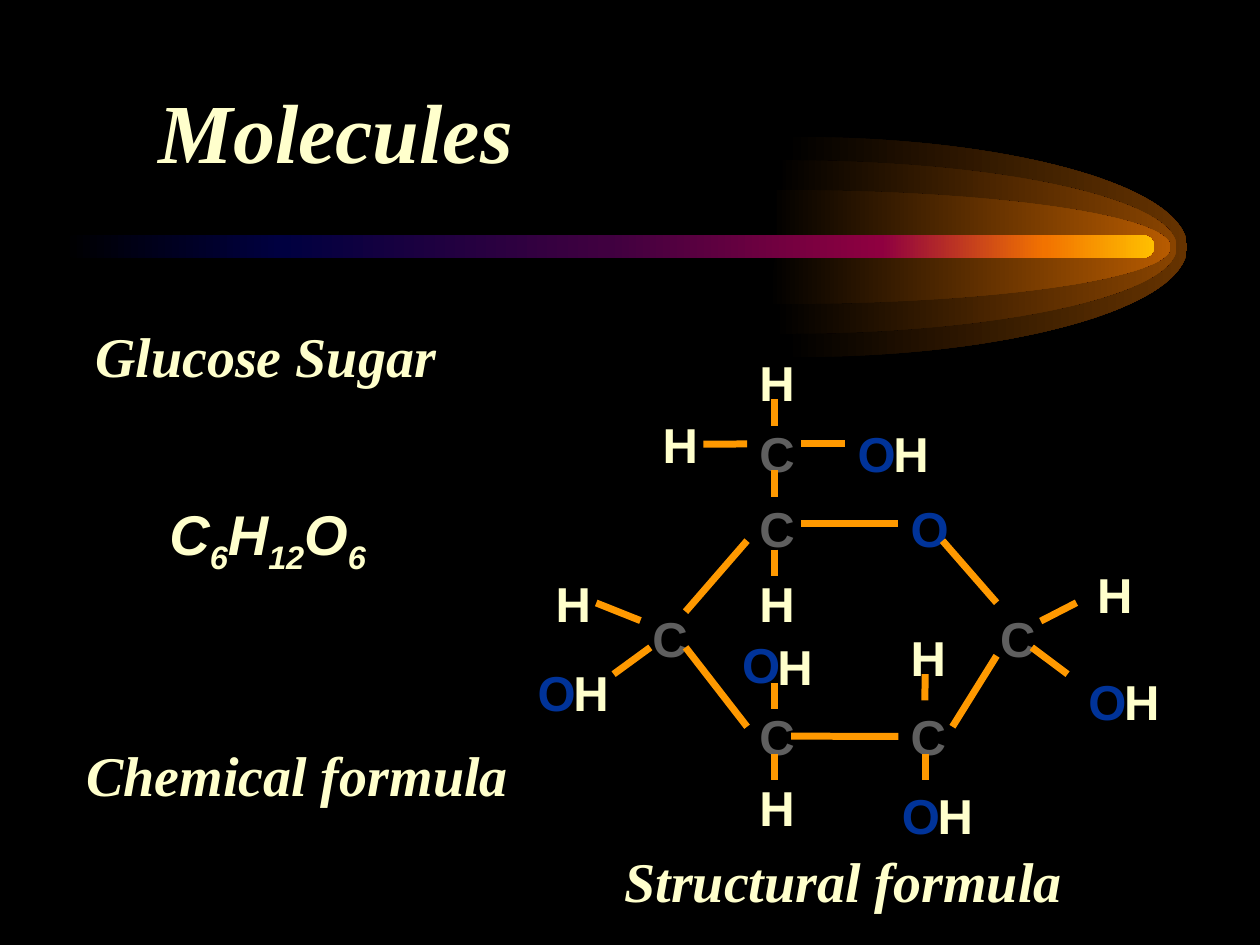
import math
import pptx
import pptx.dml.color
import pptx.enum.shapes
import pptx.enum.text
import pptx.oxml
import pptx.oxml.ns
import pptx.util
from pptx.util import Cm

COLORS = {"night": "000000", "cream": "FFFFCC", "carbon": "5F5F5F",
          "oxygen": "003399", "bond": "FF9900"}
SERIF, SANS = "Times New Roman", "Arial"

deck = pptx.Presentation()
deck.slide_width, deck.slide_height = Cm(25.4), Cm(19.05)
page = deck.slides.add_slide(deck.slide_layouts[6])
page.background.fill.solid()
page.background.fill.fore_color.rgb = pptx.dml.color.RGBColor.from_string(COLORS["night"])


def paint_gradient(shape, stops):
    """Fill left to right with (percent, hex) stops, without outline or shadow."""
    shape.shadow.inherit = False
    shape.line.fill.background()
    shape.fill.gradient()
    shape.fill.gradient_angle = 0
    stop_list = shape._element.spPr.find(".//" + pptx.oxml.ns.qn("a:gsLst"))
    for old_stop in list(stop_list):
        stop_list.remove(old_stop)
    for percent, color in stops:
        stop_list.append(pptx.oxml.parse_xml(
            f'<a:gs {pptx.oxml.ns.nsdecls("a")} pos="{percent * 1000}">'
            f'<a:srgbClr val="{color}"/></a:gs>'))


def add_label(left, top, width, height, runs, size, font, color="cream",
              italic=True, centered=True):
    """Place one line of text; runs are (text, is_subscript) pairs."""
    box = page.shapes.add_textbox(Cm(left), Cm(top), Cm(width), Cm(height))
    frame = box.text_frame
    frame.word_wrap = True
    para = frame.paragraphs[0]
    if centered:
        para.alignment = pptx.enum.text.PP_ALIGN.CENTER
    for text, is_subscript in runs:
        span = para.add_run()
        span.text = text
        span.font.name, span.font.size = font, pptx.util.Pt(size)
        span.font.bold, span.font.italic = True, italic
        span.font.color.rgb = pptx.dml.color.RGBColor.from_string(COLORS[color])
        if is_subscript:
            span._r.get_or_add_rPr().set("baseline", "-25000")
    return box


# Comet: three nested half-ellipse glows around the bar
MIDDLE, REACH, ROUND = 4.98, 7.95, 0.55
for center, radius, glow in [(15.98, 2.22, "663300"), (15.77, 1.75, "894400"),
                             (15.65, 1.15, "B75B00")]:
    # Two quarter curves (two handles and an end each), then the tail corner
    outline = [(ROUND, -1), (1, -ROUND), (1, 0), (1, ROUND), (ROUND, 1), (0, 1),
               (-0.02, 1), (0, 0)]
    builder = page.shapes.build_freeform(Cm(center), Cm(MIDDLE - radius))
    builder.add_line_segments([(Cm(center + REACH * x), Cm(MIDDLE + radius * y))
                               for x, y in outline], close=True)
    flame = builder.convert_to_shape()
    segments = flame._element.spPr.findall(".//" + pptx.oxml.ns.qn("a:lnTo"))
    for first in (0, 3):
        curve = pptx.oxml.parse_xml(f'<a:cubicBezTo {pptx.oxml.ns.nsdecls("a")}/>')
        segments[first].addprevious(curve)
        for segment in segments[first:first + 3]:
            curve.append(segment[0])
            segment.getparent().remove(segment)
    paint_gradient(flame, [(0, COLORS["night"]), (100, glow)])

bar = page.shapes.add_shape(pptx.enum.shapes.MSO_SHAPE.ROUNDED_RECTANGLE,
                            Cm(1.27), Cm(4.74), Cm(22), Cm(0.46))
bar.adjustments[0] = 0.5
paint_gradient(bar, [(0, COLORS["night"]), (20, "000040"), (50, "400040"),
                     (75, "8F0040"), (90, "F27300"), (100, "FFBF00")])

# Headings and formula
for text, left, top, width, height, size in [
        ("Molecules ", 1.69, 1.47, 10.59, 2.29, 48),
        ("Glucose Sugar ", 1.27, 6.35, 8.46, 1.6, 32),
        ("Chemical formula ", 0.84, 14.81, 10.59, 1.6, 32),
        ("Structural formula ", 11.85, 16.94, 10.59, 1.6, 32)]:
    add_label(left, top, width, height, [(text, False)], size, SERIF)
add_label(2.12, 9.95, 6.55, 1.6,
          [(part, part.isdigit()) for part in ("C", "6", "H", "12", "O", "6")], 32, SANS)

# Atoms: each group is spelled out letter by letter
GROUPS = {
    "C": [(15.06, 8.41), (15.06, 9.93), (15.06, 14.12), (18.11, 14.12),
          (12.9, 12.14), (19.91, 12.14)],
    "H": [(15.06, 6.99), (13.11, 8.23), (15.06, 11.43), (10.95, 11.43),
          (15.06, 15.54), (18.11, 12.52), (21.87, 11.25), (15.42, 12.7)],
    "O": [(18.11, 9.93), (14.71, 12.67)],
    "OH": [(17.04, 8.41), (21.69, 13.41), (17.93, 15.72), (10.59, 13.23)],
}
ATOMS = {"C": (1.07, "carbon"), "H": (1.07, "cream"), "O": (1.24, "oxygen")}
atom_boxes = []
for group, places in GROUPS.items():
    for left, top in places:
        for position, letter in enumerate(group):
            width, color = ATOMS[letter]
            atom_boxes.append(add_label(
                left + 0.72 * position, top, width, 1.45, [(letter, False)],
                28, SANS, color, italic=False, centered=False))

# Bonds: short upright ones first, then the rest
upright = [(15.61, 8.05), (15.61, 9.48), (15.61, 11.08), (15.61, 13.77),
           (15.61, 15.19), (18.65, 13.59), (18.65, 15.19)]
bonds = [(x, y, x, y + 0.53) for x, y in upright] + [
    (19, 10.9, 20.09, 12.15), (12.37, 13.59, 13.11, 13.05),
    (15.06, 14.65, 13.82, 13.05), (20.98, 12.52, 21.7, 12.15),
    (12.01, 12.14, 12.91, 12.51), (13.82, 12.33, 15.06, 10.9),
    (20.8, 13.05, 21.52, 13.59), (16.15, 10.55, 18.11, 10.55),
    (19.2, 14.65, 20.09, 13.22), (15.95, 14.84, 18.11, 14.84),
    (14.17, 8.95, 15.06, 8.95), (16.15, 8.95, 17.04, 8.95)]
for x1, y1, x2, y2 in bonds:
    bond = page.shapes.add_connector(pptx.enum.shapes.MSO_CONNECTOR.STRAIGHT,
                                     Cm(x1), Cm(y1), Cm(x2), Cm(y2))
    bond.line.color.rgb = pptx.dml.color.RGBColor.from_string(COLORS["bond"])
    bond.line.width = pptx.util.Pt(4)
    bond._element.spPr.append(pptx.oxml.parse_xml(
        f'<a:effectLst {pptx.oxml.ns.nsdecls("a")}/>'))
    # Join an end that meets the middle of an atom's side
    for box in atom_boxes:
        center_x, center_y = box.left + box.width // 2, box.top + box.height // 2
        sides = [(center_x, box.top), (box.left, center_y),
                 (center_x, box.top + box.height), (box.left + box.width, center_y)]
        for side, point in enumerate(sides):
            if math.dist(point, (Cm(x1), Cm(y1))) < Cm(0.04):
                bond.begin_connect(box, side)
            if math.dist(point, (Cm(x2), Cm(y2))) < Cm(0.04):
                bond.end_connect(box, side)

deck.save("out.pptx")
